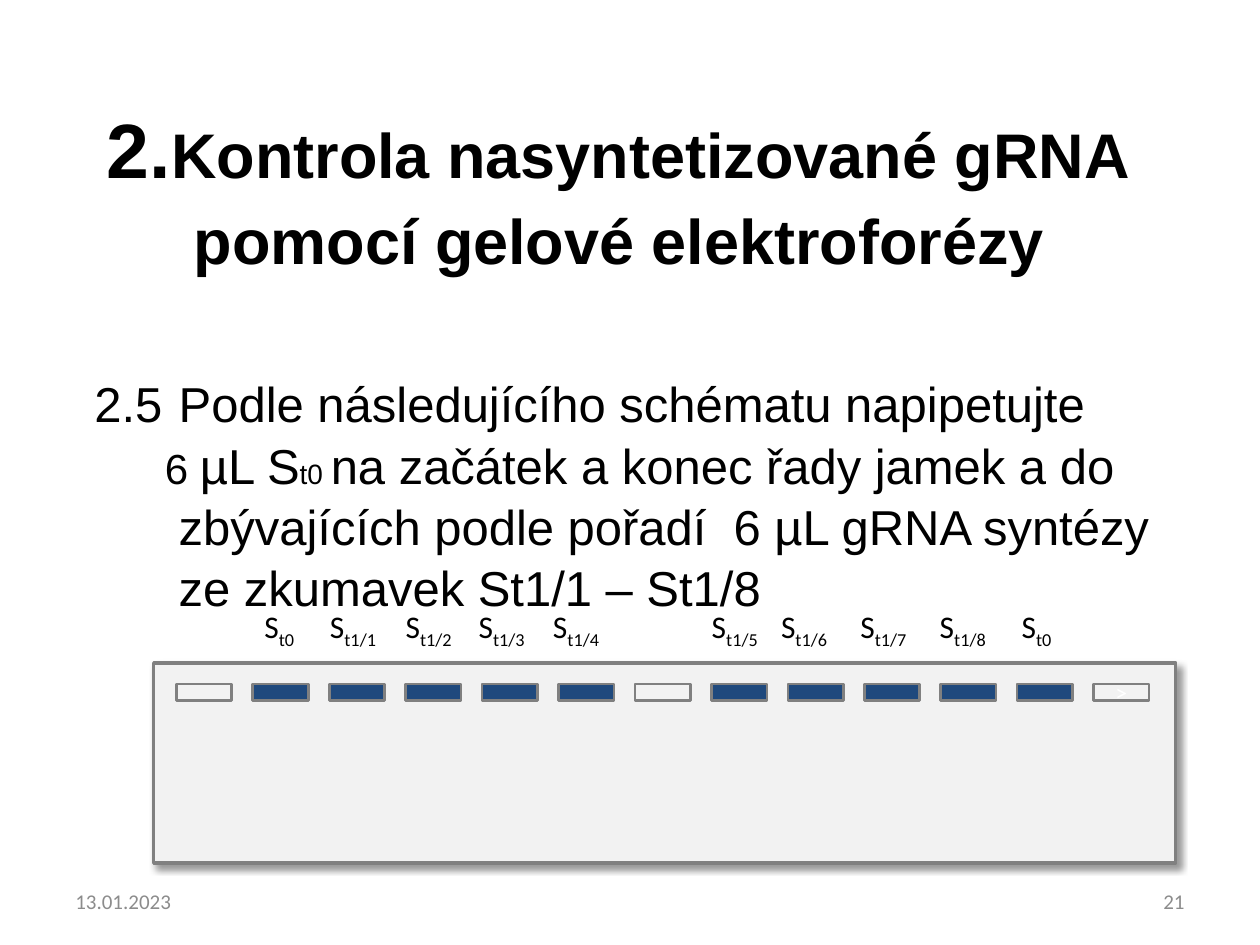
"""Build the slide on loading a gel with gRNA samples."""
from lxml.etree import SubElement
from pptx import Presentation
from pptx.dml.color import RGBColor
from pptx.enum.shapes import MSO_SHAPE as Kind
from pptx.enum.text import MSO_ANCHOR as Anchor, PP_ALIGN as Align
from pptx.oxml.ns import qn
from pptx.util import Inches, Pt

BLACK = RGBColor(0, 0, 0)
WHITE = RGBColor(255, 255, 255)
GREY = RGBColor(0x80, 0x80, 0x80)
MUTED = RGBColor(0x8C, 0x8C, 0x8C)
PALE = RGBColor(0xF2, 0xF2, 0xF2)
NAVY = RGBColor(0x1F, 0x49, 0x7D)

COLS, ROWS = 100, 75
WELLS = 13
EMPTY = (0, 6, 12)
FIRST, LAST = 14, 86.8
LABELS = (
    ("t0", 20), ("t1/1", 25.2), ("t1/2", 31.2), ("t1/3", 37), ("t1/4", 42.9),
    ("t1/5", 55.5), ("t1/6", 61), ("t1/7", 67.3), ("t1/8", 73.6), ("t0", 80.1),
)


def grid(*cells):
    """Turn grid cells, ten to the inch, into lengths."""
    return [Inches(cell / 10) for cell in cells]


def style(run, size, face="Calibri", color=BLACK, bold=False):
    """Format one run."""
    font = run.font
    font.size, font.name, font.bold = Pt(size), face, bold
    font.color.rgb = color


def frame(shapes, area, wrap=True):
    """Add a text box and return its text frame."""
    body = shapes.add_textbox(*grid(*area)).text_frame
    body.word_wrap = wrap
    return body


def write(para, parts, face="Calibri", bold=False):
    """Fill a paragraph with (text, size) runs."""
    for text, size in parts:
        run = para.add_run()
        run.text = text
        style(run, size, face, bold=bold)


def indent(para, left, first, gap):
    """Set the left margin, first-line indent and line spacing."""
    props = para._p.get_or_add_pPr()
    props.set("marL", str(Inches(left)))
    props.set("indent", str(Inches(first)))
    para.line_spacing = gap


def label(shapes, sub, col):
    """Add a sample label with a subscript."""
    para = frame(shapes, (col, 47.7, 6.1, 4), False).paragraphs[0]
    write(para, [("S", 18), (sub, 18)])
    para.runs[1].font._element.set("baseline", "-25000")


def block(shapes, area, fill, width):
    """Add a grey-edged rectangle without shadow."""
    shape = shapes.add_shape(Kind.RECTANGLE, *grid(*area))
    shape.shadow.inherit = False
    shape.fill.solid()
    shape.fill.fore_color.rgb = fill
    shape.line.color.rgb = GREY
    shape.line.width = Pt(width)
    return shape


def shade(shape):
    """Give a shape a soft shadow to the lower right."""
    list_ = shape._element.spPr.find(qn("a:effectLst"))
    drop = SubElement(list_, qn("a:outerShdw"), blurRad=str(Pt(4)),
                      dist=str(Pt(3)), dir="2700000", algn="tl", rotWithShape="0")
    tint = SubElement(drop, qn("a:srgbClr"), val=str(BLACK))
    SubElement(tint, qn("a:alpha"), val="40000")


def gel(slide):
    """Draw the gel with its wells and labels as one group."""
    shapes = slide.shapes.add_group_shape().shapes
    shade(block(shapes, (12.2, 52.6, 81.1, 15.9), PALE, 2))
    step = (LAST - FIRST) / (WELLS - 1)
    for i in range(WELLS):
        fill = PALE if i in EMPTY else NAVY
        well = block(shapes, (FIRST + i * step, 54.3, 4.4, 1.3), fill, 1.5)
    body = well.text_frame
    body.text = ">"
    body.vertical_anchor = Anchor.MIDDLE
    body.paragraphs[0].alignment = Align.CENTER
    style(body.paragraphs[0].runs[0], 13.5, color=WHITE)
    for sub, col in LABELS:
        label(shapes, sub, col)


def step_text(slide):
    """Write the numbered instruction."""
    body = frame(slide.shapes, (6.5, 29, 90.1, 19.9))
    head, rest = body.paragraphs[0], body.add_paragraph()
    write(head, [("2.5 \tPodle následujícího schématu napipetujte", 28)], "Arial")
    write(rest, [
        ("6 ", 24), ("µL S", 28), ("t0 ", 16),
        ("na začátek a konec řady jamek a do zbývajících podle pořadí  "
         "6 µL gRNA syntézy ze zkumavek St1/1 – St1/8", 28),
    ], "Arial")
    indent(head, 0.67, -0.67, 1.04)
    indent(rest, 0.67, -0.11, 1.04)


def title(slide):
    """Write the heading."""
    para = frame(slide.shapes, (7.5, 6.8, 85.8, 14.1)).paragraphs[0]
    write(para, [
        ("2.", 44),
        ("Kontrola nasyntetizované gRNA pomocí gelové elektroforézy", 36),
    ], "Arial", True)
    indent(para, 0.69, -0.69, 1.1)


def foot(slide, text, col, align):
    """Write one footer item."""
    body = frame(slide.shapes, (col, 69.5, 23.3, 4))
    body.text = text
    body.vertical_anchor = Anchor.MIDDLE
    body.paragraphs[0].alignment = align
    style(body.paragraphs[0].runs[0], 12, color=MUTED)


def main():
    """Build and save the deck."""
    deck = Presentation()
    deck.slide_width, deck.slide_height = grid(COLS, ROWS)
    slide = deck.slides.add_slide(deck.slide_layouts[6])
    step_text(slide)
    gel(slide)
    title(slide)
    foot(slide, "13.01.2023", 5, Align.LEFT)
    foot(slide, "21", 71.7, Align.RIGHT)
    deck.save("out.pptx")


if __name__ == "__main__":
    main()
